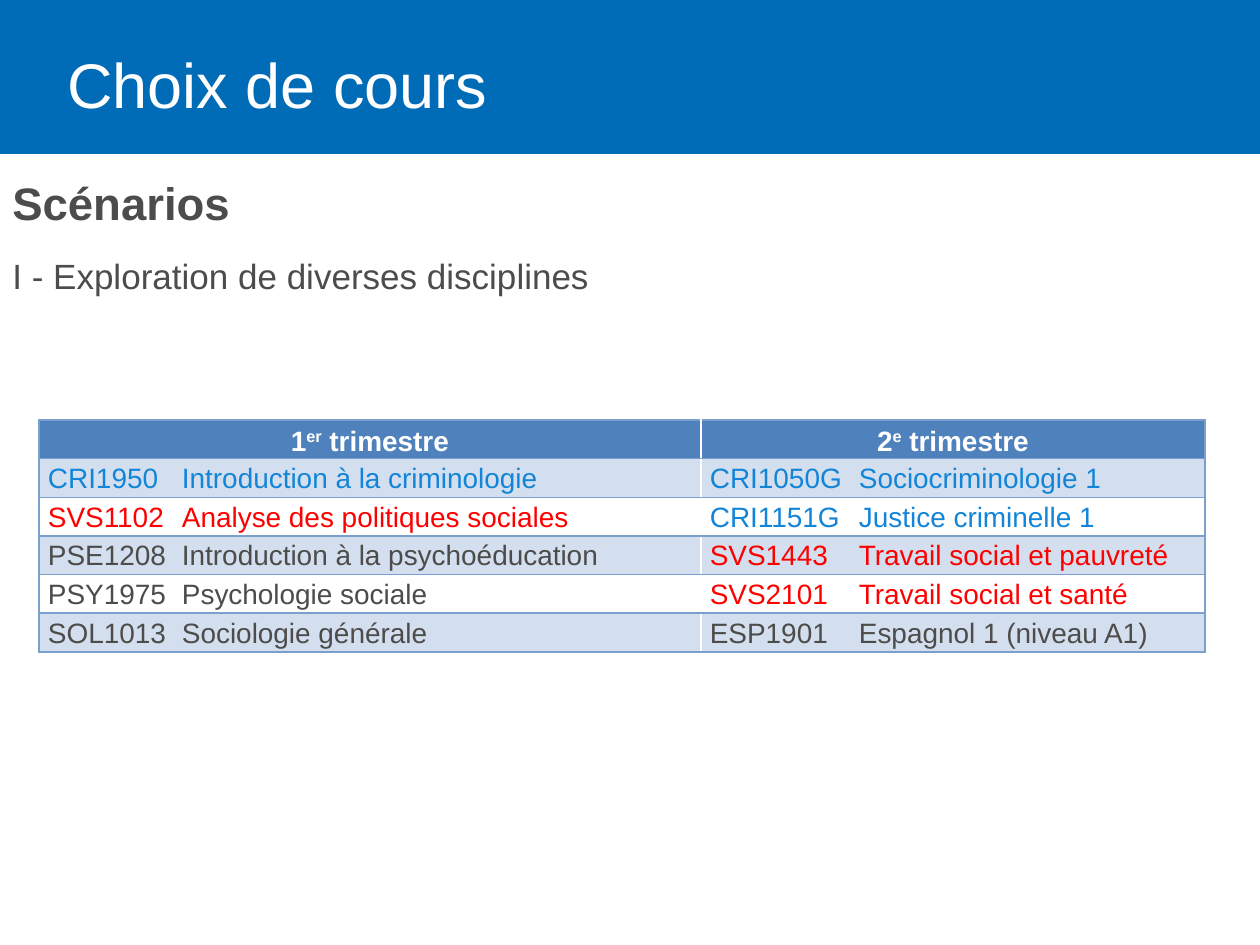
from pptx import Presentation
from pptx.dml.color import RGBColor
from pptx.enum.shapes import MSO_SHAPE as SHAPE
from pptx.enum.text import MSO_ANCHOR as ANCHOR, PP_ALIGN as ALIGN
from pptx.oxml.ns import qn
from pptx.util import Pt
from lxml.etree import SubElement

# Content
TITLE = "Choix de cours"
BODY = [("Scénarios", 26, True),
        ("I - Exploration de diverses disciplines", 20, False)]
HEADERS = [("1", "er", " trimestre"), ("2", "e", " trimestre")]
COURSES = [  # (code, name, colour) for each term
    [("CRI1950", "Introduction à la criminologie", "blue"),
     ("CRI1050G", "Sociocriminologie 1", "blue")],
    [("SVS1102", "Analyse des politiques sociales", "red"),
     ("CRI1151G", "Justice criminelle 1", "blue")],
    [("PSE1208", "Introduction à la psychoéducation", "text"),
     ("SVS1443", "Travail social et pauvreté", "red")],
    [("PSY1975", "Psychologie sociale", "text"),
     ("SVS2101", "Travail social et santé", "red")],
    [("SOL1013", "Sociologie générale", "text"),
     ("ESP1901", "Espagnol 1 (niveau A1)", "text")],
]
COLORS = {"banner": "006BB6", "white": "FFFFFF", "text": "4D4C4A", "blue": "1285D9",
          "red": "FF0000", "header": "4F81BD", "band": "D3DFEE", "border": "7BA0CD"}

# Layout in px
EMU_PER_PX = 914400 // 126
COL_WIDTHS = [662, 504]
NAME_TABS = [134, 149]
ROW_HEIGHT = 36


def px(*values):
    return [v * EMU_PER_PX for v in values]


def rgb(name):
    return RGBColor.from_string(COLORS[name])


def add_run(p, text, size, color, bold=False):
    r = p.add_run()
    r.text = text
    r.font.name, r.font.size, r.font.bold = "Arial", Pt(size), bold
    r.font.color.rgb = rgb(color)
    return r


def add_text_box(*box):
    tf = slide.shapes.add_textbox(*px(*box)).text_frame
    tf.word_wrap = True
    return tf


def set_borders(cell, sides):
    tcPr = cell._tc.get_or_add_tcPr()
    for i, side in enumerate(sides):
        ln = tcPr.makeelement(qn("a:ln" + side), {"w": str(Pt(1))})
        fill = SubElement(ln, qn("a:solidFill"))
        SubElement(fill, qn("a:srgbClr"), val=COLORS["border"])
        tcPr.insert(i, ln)


def add_tab(p, pos):
    tabs = SubElement(p._p.get_or_add_pPr(), qn("a:tabLst"))
    SubElement(tabs, qn("a:tab"), pos=str(px(pos)[0]), algn="l")


prs = Presentation()
prs.slide_width, prs.slide_height = px(1260, 945)
slide = prs.slides.add_slide(prs.slide_layouts[6])

# Banner and title
banner = slide.shapes.add_shape(SHAPE.RECTANGLE, *px(0, 0, 1260, 154))
banner.shadow.inherit = False
banner.fill.solid()
banner.fill.fore_color.rgb = rgb("banner")
banner.line.fill.background()

tf = add_text_box(55, 26, 1149, 125)
tf.vertical_anchor = ANCHOR.MIDDLE
p = tf.paragraphs[0]
p.line_spacing = 0.9
add_run(p, TITLE, 36, "white")

# Introductory text
tf = add_text_box(0, 163, 1203, 240)
for i, (text, size, bold) in enumerate(BODY):
    p = tf.add_paragraph() if i else tf.paragraphs[0]
    p.line_spacing = 1.1
    p.space_before, p.space_after = Pt(6 if i else 0), Pt(6)
    add_run(p, text, size, "text", bold)

# Course table
n_rows = len(COURSES) + 1
table = slide.shapes.add_table(
    n_rows, 2, *px(39, 420, sum(COL_WIDTHS), n_rows * ROW_HEIGHT)).table
for col, width in zip(table.columns, px(*COL_WIDTHS)):
    col.width = width
for row, content in enumerate([HEADERS] + COURSES):
    table.rows[row].height = px(ROW_HEIGHT)[0]
    for col, item in enumerate(content):
        cell = table.cell(row, col)
        cell.margin_left = cell.margin_right = px(9)[0]
        cell.margin_top = cell.margin_bottom = 0
        if row % 2 or row == 0 or row == n_rows - 1:
            cell.fill.solid()
            cell.fill.fore_color.rgb = rgb("band" if row else "header")
        else:
            cell.fill.background()
        set_borders(cell, "RTB" if col else "LTB")

        p = cell.text_frame.paragraphs[0]
        p.line_spacing = 1.15
        if row:
            code, name, color = item
            add_tab(p, NAME_TABS[col])
            add_run(p, f"{code}\t{name}", 16, color)
        else:
            cell.vertical_anchor = ANCHOR.MIDDLE
            p.alignment = ALIGN.CENTER
            number, suffix, label = item
            add_run(p, number, 16, "white", True)
            r = add_run(p, suffix, 16, "white", True)
            r.font._element.set("baseline", "30000")
            add_run(p, label, 16, "white", True)

prs.save("out.pptx")
